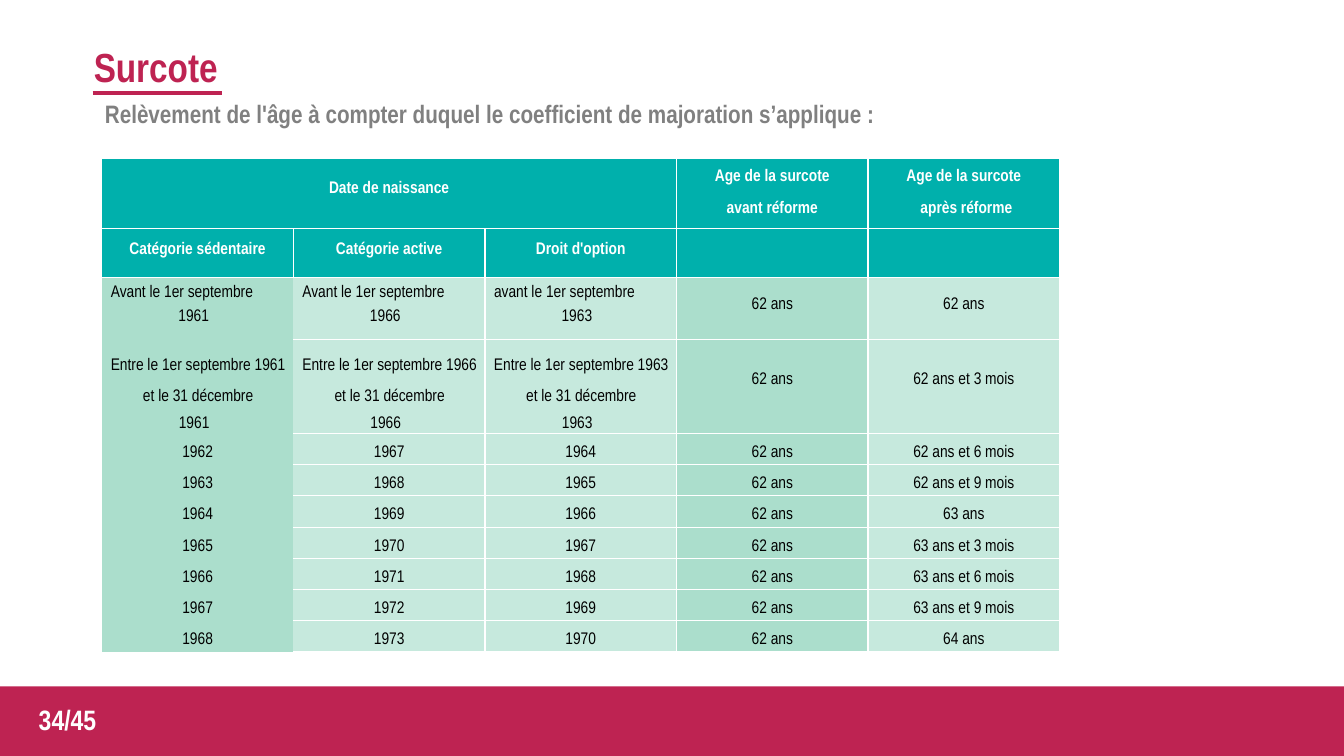
"""Build the slide showing how the surcote age rises by birth date."""
from dataclasses import dataclass

from lxml import etree
from pptx import Presentation
from pptx.dml.color import RGBColor
from pptx.enum.shapes import MSO_CONNECTOR, MSO_SHAPE
from pptx.enum.text import MSO_ANCHOR, MSO_AUTO_SIZE, PP_ALIGN
from pptx.oxml.ns import qn
from pptx.util import Inches, Pt

LEFT, CENTER = PP_ALIGN.LEFT, PP_ALIGN.CENTER
MIDDLE, TOP = MSO_ANCHOR.MIDDLE, MSO_ANCHOR.TOP
NO_AUTOFIT = MSO_AUTO_SIZE.NONE
RECTANGLE, STRAIGHT = MSO_SHAPE.RECTANGLE, MSO_CONNECTOR.STRAIGHT

CRIMSON = RGBColor(0xBE, 0x23, 0x52)
GRAY = RGBColor(0x80, 0x80, 0x80)
WHITE = RGBColor(0xFF, 0xFF, 0xFF)
BLACK = RGBColor(0x00, 0x00, 0x00)
TEAL = RGBColor(0x00, 0xB0, 0xAC)
GREEN = RGBColor(0xAB, 0xDE, 0xCC)
PALE_GREEN = RGBColor(0xC6, 0xE9, 0xDD)
FONT = "Arial Narrow"

COLUMN_WIDTH = 1.9
ROW_HEIGHTS = [0.7, 0.48, 0.62, 0.93] + [0.31] * 7
HEADER_ROWS = 2
DARK_COLUMNS = (0, 3)
BIRTH_YEARS = (1961, 1966, 1963)
AGES_AFTER = ("62 ans et 6 mois", "62 ans et 9 mois", "63 ans", "63 ans et 3 mois",
              "63 ans et 6 mois", "63 ans et 9 mois", "64 ans")


@dataclass(frozen=True)
class Line:
    """One paragraph with its spacing and indents."""
    text: str
    before: float = 0
    spacing: object = None
    margin: float = 0
    indent: float = 0
    align: object = CENTER


@dataclass(frozen=True)
class CellContent:
    """The lines of one table cell with its margins."""
    lines: tuple = ()
    top: float = 0
    right: float = 0
    bottom: float = 0
    anchor: object = MIDDLE


def write_line(paragraph, line: Line, *, size: float, color: RGBColor,
               bold: bool = False) -> None:
    """Fill a paragraph with formatted text."""
    paragraph.alignment = line.align
    paragraph.space_before = Pt(line.before)
    if line.spacing:
        paragraph.line_spacing = line.spacing
    properties = paragraph._p.get_or_add_pPr()
    properties.set("marL", str(Inches(line.margin)))
    properties.set("indent", str(Inches(line.indent)))
    run = paragraph.add_run()
    run.text = line.text
    run.font.name = FONT
    run.font.size = Pt(size)
    run.font.bold = bold
    run.font.color.rgb = color


def paragraph_at(text_frame, index: int):
    """Return the first paragraph or append a new one."""
    return text_frame.add_paragraph() if index else text_frame.paragraphs[0]


def add_title(slide) -> None:
    """Place the title with its subtitle line and underline."""
    title = slide.shapes.title
    title.left, title.top = Inches(0.92), Inches(0.26)
    title.width, title.height = Inches(9.44), Inches(1.02)
    frame = title.text_frame
    frame.auto_size = NO_AUTOFIT
    frame.word_wrap = True
    frame.vertical_anchor = MIDDLE
    frame.margin_left = frame.margin_right = frame.margin_bottom = 0
    frame.margin_top = Inches(0.15)
    subtitle = "Relèvement de l'âge à compter duquel le coefficient de majoration s’applique :"
    write_line(frame.paragraphs[0], Line("Surcote", margin=0.01, align=LEFT),
               size=29, color=CRIMSON, bold=True)
    write_line(frame.add_paragraph(), Line(subtitle, before=5.9, margin=0.12, align=LEFT),
               size=18, color=GRAY, bold=True)
    underline = slide.shapes.add_connector(
        STRAIGHT, Inches(0.92), Inches(0.92), Inches(2.2), Inches(0.92))
    underline.line.color.rgb = CRIMSON
    underline.line.width = Pt(3)
    etree.SubElement(underline._element.spPr, qn("a:effectLst"))


def add_footer(slide) -> None:
    """Draw the bottom band and the page number."""
    band = slide.shapes.add_shape(RECTANGLE, 0, Inches(6.81), Inches(13.33), Inches(0.69))
    band.shadow.inherit = False
    band.fill.solid()
    band.fill.fore_color.rgb = CRIMSON
    band.line.fill.background()
    box = slide.shapes.add_textbox(Inches(0.17), Inches(6.92), Inches(1), Inches(0.44))
    box.text_frame.word_wrap = True
    write_line(box.text_frame.paragraphs[0], Line("34/45"), size=20, color=WHITE, bold=True)


def header_rows() -> list[list[CellContent]]:
    """Return the two header rows."""
    ages = [CellContent((Line("Age de la surcote"),
                         Line(f"{moment} réforme", before=11.5, margin=margin)))
            for moment, margin in (("avant", 0), ("après", 0.05))]
    birth = CellContent((Line("Date de naissance"),), bottom=0.09)
    categories = [CellContent((Line(name),), bottom=0.06)
                  for name in ("Catégorie sédentaire", "Catégorie active", "Droit d'option")]
    return [[birth, CellContent(), CellContent(), *ages],
            [*categories, CellContent(), CellContent()]]


def body_rows() -> list[list[CellContent]]:
    """Return the rows of birth dates and ages."""
    before = [CellContent((Line(f"{word} le 1er septembre {year}", spacing=1.53,
                                margin=0.76, indent=-0.67, align=LEFT),),
                          right=0.25, anchor=TOP)
              for word, year in zip(("Avant", "Avant", "avant"), BIRTH_YEARS)]
    between = [CellContent((Line(f"Entre le 1er septembre {year} et le 31 décembre",
                                 spacing=Pt(22.1), margin=0.08),
                            Line(str(year), before=5.5, spacing=Pt(13.9))),
                           top=0.03, right=0.07, anchor=TOP)
               for year in BIRTH_YEARS]
    before += [CellContent((Line("62 ans"),), bottom=0.07)] * 2
    between += [CellContent((Line(age),), bottom=0.13)
                for age in ("62 ans", "62 ans et 3 mois")]
    yearly = [[CellContent((Line(text),), top=0.08)
               for text in (*(str(year + step) for year in BIRTH_YEARS), "62 ans", age)]
              for step, age in enumerate(AGES_AFTER, start=1)]
    return [before, between, *yearly]


def border_sides(row: int, column: int) -> str:
    """Tell which sides of a cell carry a white border."""
    if row < HEADER_ROWS or column > 1:
        return "LRTB"
    if column == 1:
        return "RTB"
    return "T" if row == HEADER_ROWS else ""


def set_borders(cell, sides: str) -> None:
    """Draw white borders on the given sides and none elsewhere."""
    properties = cell._tc.get_or_add_tcPr()
    for side in "LRTB":
        border = etree.SubElement(properties, qn(f"a:ln{side}"), w=str(Pt(1)))
        if side in sides:
            fill = etree.SubElement(border, qn("a:solidFill"))
            etree.SubElement(fill, qn("a:srgbClr"), val=str(WHITE))
        else:
            etree.SubElement(border, qn("a:noFill"))


def format_cell(cell, content: CellContent, row: int, column: int) -> None:
    """Write and format one table cell."""
    header = row < HEADER_ROWS
    set_borders(cell, border_sides(row, column))
    cell.fill.solid()
    body_color = GREEN if column in DARK_COLUMNS else PALE_GREEN
    cell.fill.fore_color.rgb = TEAL if header else body_color
    cell.vertical_anchor = content.anchor
    cell.margin_left = 0
    cell.margin_top = Inches(content.top)
    cell.margin_right = Inches(content.right)
    cell.margin_bottom = Inches(content.bottom)
    for index, line in enumerate(content.lines):
        write_line(paragraph_at(cell.text_frame, index), line, size=12,
                   color=WHITE if header else BLACK, bold=header)


def add_age_table(slide) -> None:
    """Add the table of ages by birth date."""
    rows = header_rows() + body_rows()
    columns = len(rows[0])
    table = slide.shapes.add_table(
        len(rows), columns, Inches(1.01), Inches(1.57),
        Inches(COLUMN_WIDTH * columns), Inches(sum(ROW_HEIGHTS))).table
    table.first_row = table.horz_banding = False
    for column in table.columns:
        column.width = Inches(COLUMN_WIDTH)
    for row, height in zip(table.rows, ROW_HEIGHTS):
        row.height = Inches(height)
    for row_index, contents in enumerate(rows):
        for column_index, content in enumerate(contents):
            format_cell(table.cell(row_index, column_index), content, row_index, column_index)
    table.cell(0, 0).merge(table.cell(0, 2))


def main() -> None:
    """Build and save the presentation."""
    presentation = Presentation()
    presentation.slide_width, presentation.slide_height = Inches(13.33), Inches(7.5)
    slide = presentation.slides.add_slide(presentation.slide_layouts[5])
    add_footer(slide)
    add_title(slide)
    add_age_table(slide)
    presentation.save("out.pptx")


if __name__ == "__main__":
    main()
